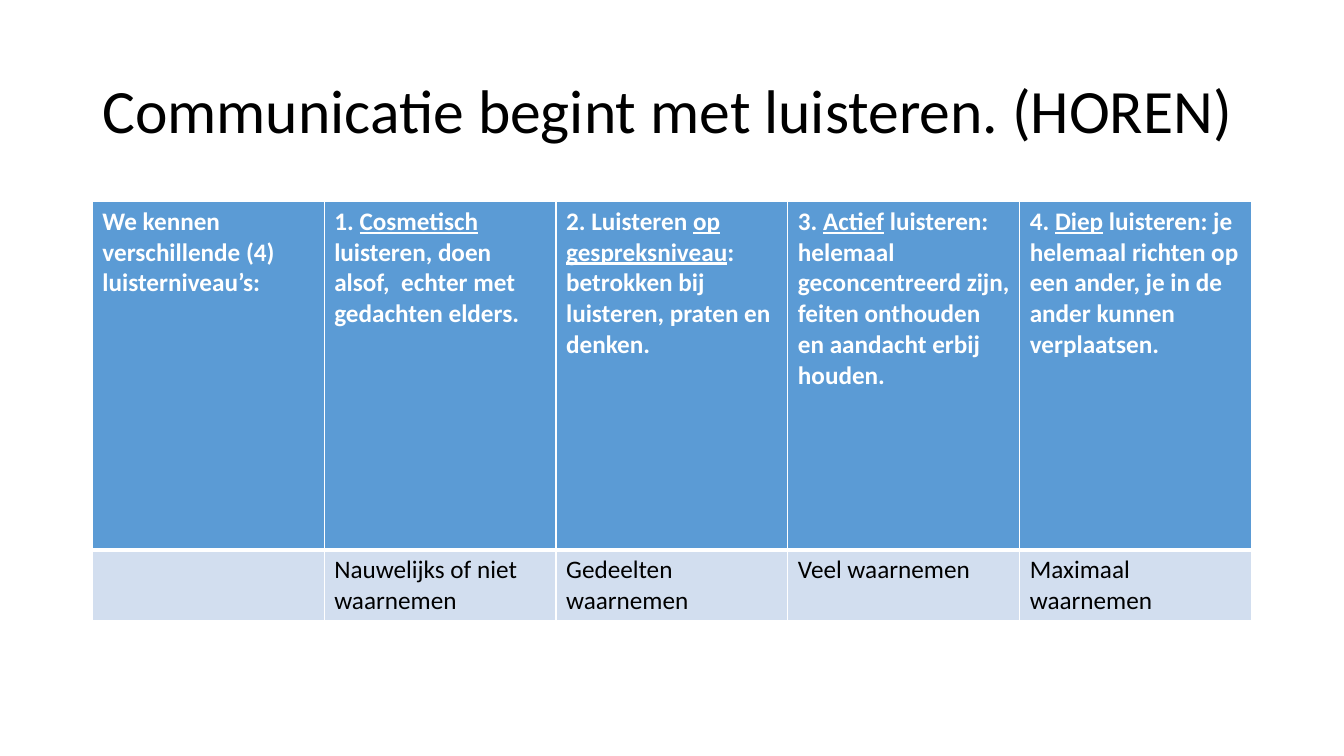
"""Builds a slide with a table of the four levels of listening."""
import pptx
import pptx.dml.color
import pptx.enum.text
import pptx.oxml
import pptx.oxml.ns
import pptx.util

Pt = pptx.util.Pt
BLACK = pptx.dml.color.RGBColor(0x00, 0x00, 0x00)
WHITE = pptx.dml.color.RGBColor(0xFF, 0xFF, 0xFF)
BLUE = pptx.dml.color.RGBColor(0x5B, 0x9B, 0xD5)
PALE_BLUE = pptx.dml.color.RGBColor(0xD2, 0xDE, 0xEF)
FONT = "Calibri"

LEVELS = [
    (("We kennen verschillende (4) luisterniveau’s:", "", ""), ""),
    (("1. ", "Cosmetisch", " luisteren, doen alsof,  echter met gedachten elders."),
     "Nauwelijks of niet waarnemen"),
    (("2. Luisteren ", "op gespreksniveau", ": betrokken bij luisteren, praten en denken."),
     "Gedeelten waarnemen"),
    (("3. ", "Actief", " luisteren: helemaal geconcentreerd zijn, feiten onthouden "
      "en aandacht erbij houden."), "Veel waarnemen"),
    (("4. ", "Diep", " luisteren: je helemaal richten op een ander, je in de ander "
      "kunnen verplaatsen."), "Maximaal waarnemen"),
]


def style_cell(cell, fill, color, bold, top, bottom):
    """Sets the borders, fill and font of a cell."""
    properties = cell._tc.get_or_add_tcPr()
    for side, width in (("L", 1), ("R", 1), ("T", top), ("B", bottom)):
        properties.append(pptx.oxml.parse_xml(
            f'<a:ln{side} {pptx.oxml.ns.nsdecls("a")} w="{Pt(width)}">'
            f'<a:solidFill><a:srgbClr val="{WHITE}"/></a:solidFill></a:ln{side}>'))
    cell.fill.solid()
    cell.fill.fore_color.rgb = fill
    font = cell.text_frame.paragraphs[0].font
    font.name, font.size, font.bold = FONT, Pt(18), bold
    font.color.rgb = color


presentation = pptx.Presentation()
presentation.slide_width, presentation.slide_height = Pt(960), Pt(540)
slide = presentation.slides.add_slide(presentation.slide_layouts[6])

title = slide.shapes.add_textbox(Pt(66), Pt(28.75), Pt(828), Pt(104.4)).text_frame
title.word_wrap = True
title.vertical_anchor = pptx.enum.text.MSO_ANCHOR.MIDDLE
heading = title.paragraphs[0]
heading.text = "Communicatie begint met luisteren. (HOREN)"
heading.line_spacing = 0.9
heading.font.name, heading.font.size = FONT, Pt(44)
heading.font.color.rgb = BLACK

levels = slide.shapes.add_table(2, len(LEVELS), Pt(66), Pt(143.75), Pt(828), Pt(295)).table
levels.rows[0].height, levels.rows[1].height = Pt(249), Pt(46)

for column, (description, perception) in enumerate(LEVELS):
    levels.columns[column].width = Pt(165.6)
    level, result = levels.cell(0, column), levels.cell(1, column)
    for part, underlined in zip(description, (False, True, False)):
        if part:
            run = level.text_frame.paragraphs[0].add_run()
            run.text = part
            if underlined:
                run.font.underline = True
    result.text = perception
    style_cell(level, BLUE, WHITE, True, 1, 3)
    style_cell(result, PALE_BLUE, BLACK, False, 3, 1)

presentation.save("out.pptx")
